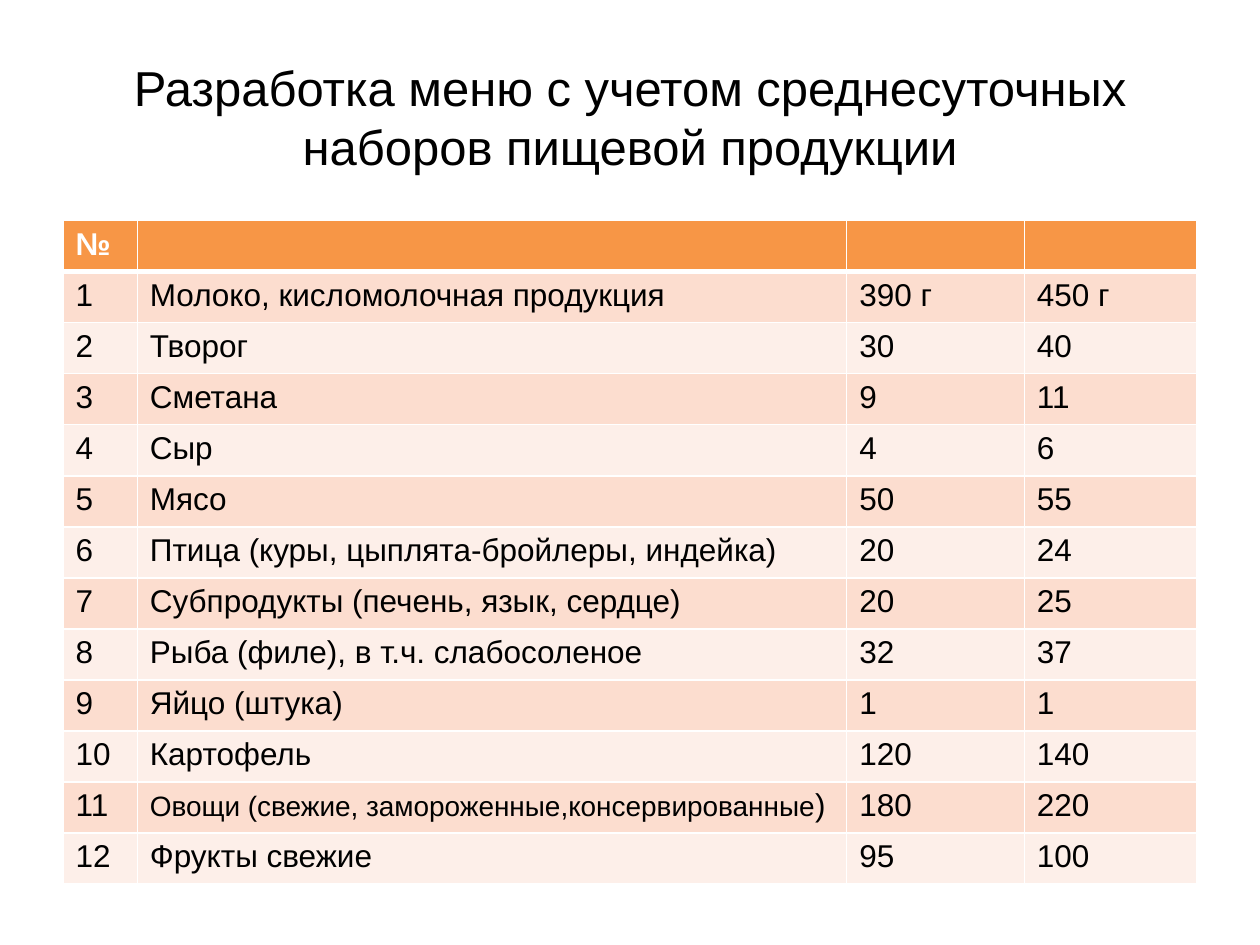
from lxml.etree import SubElement
from pptx import Presentation
from pptx.dml.color import RGBColor
from pptx.enum.text import MSO_ANCHOR, PP_ALIGN
from pptx.oxml.ns import qn
from pptx.util import Inches, Pt

BLACK = RGBColor(0x00, 0x00, 0x00)
WHITE = RGBColor(0xFF, 0xFF, 0xFF)
ORANGE = RGBColor(0xF7, 0x96, 0x46)
PEACH = RGBColor(0xFC, 0xDD, 0xCF)
CREAM = RGBColor(0xFD, 0xEF, 0xE9)

TITLE = "Разработка меню с учетом среднесуточных наборов пищевой продукции"
TITLE_FONT = {"name": "Arial", "size": Pt(28), "bold": False}
HEADER_FONT = {"name": "Arial", "size": Pt(18), "bold": True}
BODY_FONT = {"name": "Arial", "size": Pt(18), "bold": False}
NARROW_FONT = {"name": "Arial", "size": Pt(16), "bold": False}

HEADINGS = ["№", "", "", ""]
COLUMN_WIDTHS = [0.59, 5.63, 1.41, 1.37]
TABLE_HEIGHT = 5.27
LONG_PRODUCT = "Овощи (свежие, замороженные,консервированные"
PRODUCTS = [
    ("Молоко, кисломолочная продукция", "390 г", "450 г"),
    ("Творог", "30", "40"),
    ("Сметана", "9", "11"),
    ("Сыр", "4", "6"),
    ("Мясо", "50", "55"),
    ("Птица (куры, цыплята-бройлеры, индейка)", "20", "24"),
    ("Субпродукты (печень, язык, сердце)", "20", "25"),
    ("Рыба (филе), в т.ч. слабосоленое", "32", "37"),
    ("Яйцо (штука)", "1", "1"),
    ("Картофель", "120", "140"),
    (LONG_PRODUCT + ")", "180", "220"),
    ("Фрукты свежие", "95", "100"),
]


def add_run(paragraph, text, font_format, color):
    """Append a run with the given font values and colour."""
    run = paragraph.add_run()
    run.text = text
    for attribute, value in font_format.items():
        setattr(run.font, attribute, value)
    run.font.color.rgb = color


def set_title(slide):
    """Place and format the slide title."""
    title = slide.shapes.title
    place = {"left": Inches(0.5), "top": Inches(0.3),
             "width": Inches(9), "height": Inches(1.25)}
    for attribute, value in place.items():
        setattr(title, attribute, value)
    title.text_frame.vertical_anchor = MSO_ANCHOR.MIDDLE
    paragraph = title.text_frame.paragraphs[0]
    paragraph.alignment = PP_ALIGN.CENTER
    add_run(paragraph, TITLE, TITLE_FONT, BLACK)


def set_borders(cell, top, bottom):
    """Draw white borders round a cell, with widths in points."""
    properties = cell._tc.get_or_add_tcPr()
    widths = {"a:lnL": 1, "a:lnR": 1, "a:lnT": top, "a:lnB": bottom}
    for position, (tag, width) in enumerate(widths.items()):
        line = SubElement(properties, qn(tag), w=str(Pt(width)))
        SubElement(SubElement(line, qn("a:solidFill")), qn("a:srgbClr"), val=str(WHITE))
        properties.insert(position, line)


def fill_cell(cell, text, row_index):
    """Write and style one cell according to its row."""
    is_header = row_index == 0
    cell.fill.solid()
    cell.fill.fore_color.rgb = ORANGE if is_header else PEACH if row_index % 2 else CREAM
    set_borders(cell, 3 if row_index == 1 else 1, 3 if is_header else 1)
    paragraph = cell.text_frame.paragraphs[0]
    if text.startswith(LONG_PRODUCT):
        add_run(paragraph, LONG_PRODUCT, NARROW_FONT, BLACK)
        text = text.removeprefix(LONG_PRODUCT)
    if text:
        add_run(paragraph, text, HEADER_FONT if is_header else BODY_FONT,
                WHITE if is_header else BLACK)


def add_ration_table(slide):
    """Add the numbered table of daily product amounts."""
    rows = [HEADINGS] + [(str(number), *product)
                         for number, product in enumerate(PRODUCTS, start=1)]
    ration = slide.shapes.add_table(len(rows), len(HEADINGS), Inches(0.5), Inches(1.75),
                                    Inches(9), Inches(TABLE_HEIGHT)).table
    for column, width in zip(ration.columns, COLUMN_WIDTHS):
        column.width = Inches(width)
    for row_index, texts in enumerate(rows):
        ration.rows[row_index].height = Inches(TABLE_HEIGHT / len(rows))
        for column_index, text in enumerate(texts):
            fill_cell(ration.cell(row_index, column_index), text, row_index)


def main():
    """Build and save the slide."""
    presentation = Presentation()
    presentation.slide_width = Inches(10)
    presentation.slide_height = Inches(7.5)
    slide = presentation.slides.add_slide(presentation.slide_layouts[5])
    set_title(slide)
    add_ration_table(slide)
    presentation.save("out.pptx")


if __name__ == "__main__":
    main()
